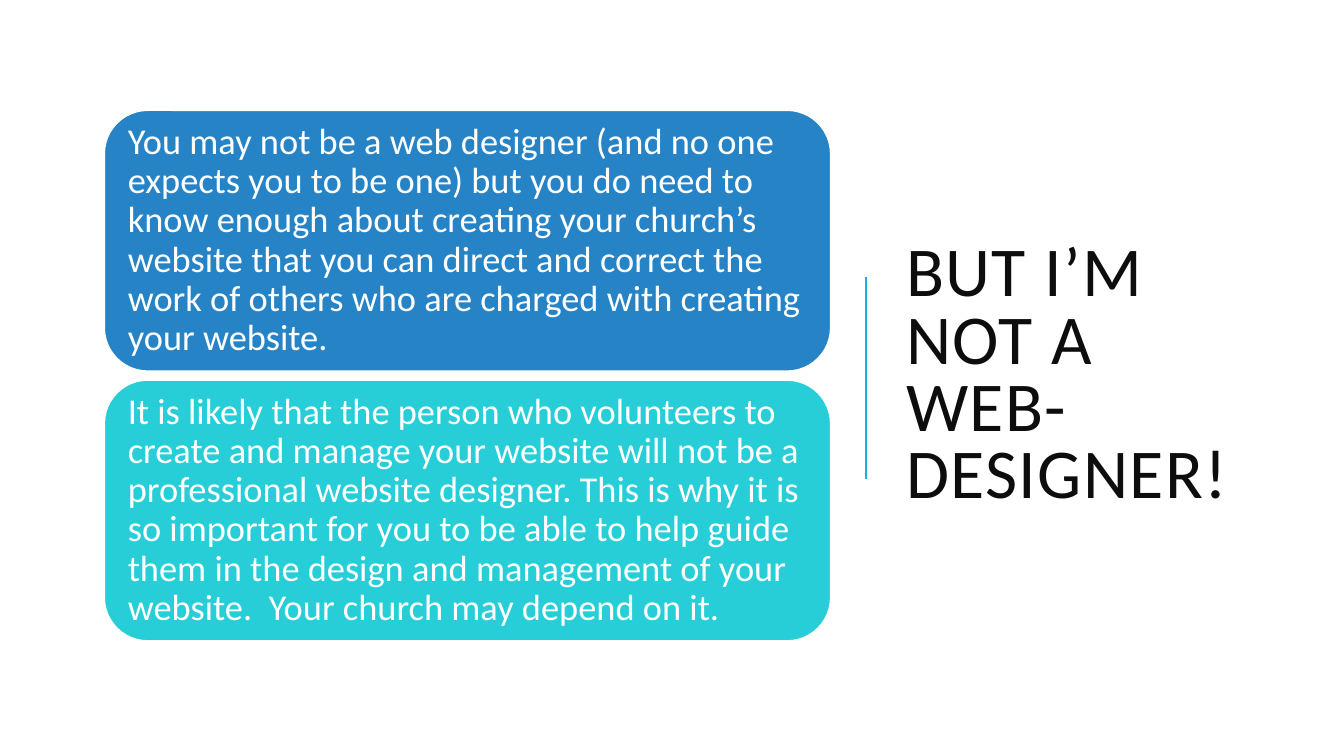
from lxml import etree
from pptx import Presentation
from pptx.dml.color import RGBColor
from pptx.enum import shapes, text
from pptx.oxml import ns
from pptx.util import Pt

COLOURS = {"ink": "0D0D0D", "white": "FFFFFF", "divider": "1CADE4",
           "blue": "2683C6", "turquoise": "27CED7"}
FONT = "Calibri"


def colour(name):
    return RGBColor.from_string(COLOURS[name])


def write(frame, wording, size, ink, line_spacing):
    frame.word_wrap = True
    frame.auto_size = text.MSO_AUTO_SIZE.NONE
    frame.vertical_anchor = text.MSO_ANCHOR.MIDDLE
    paragraph = frame.paragraphs[0]
    paragraph.alignment = text.PP_ALIGN.LEFT
    paragraph.line_spacing = line_spacing
    run = paragraph.add_run()
    run.text = wording
    run.font.name = FONT
    run.font.size = Pt(size)
    run.font.color.rgb = colour(ink)
    return run


deck = Presentation()
deck.slide_width, deck.slide_height = Pt(960), Pt(540)
slide = deck.slides.add_slide(deck.slide_layouts[5])

divider = slide.shapes.add_connector(
    shapes.MSO_CONNECTOR.STRAIGHT, Pt(618.5), Pt(342), Pt(618.5), Pt(198))
divider.line.color.rgb = colour("divider")
divider.line.width = Pt(1.5)
etree.SubElement(divider._element.spPr, ns.qn("a:effectLst"))

title = slide.shapes.title
title.left, title.top, title.width, title.height = Pt(640), Pt(50.4), Pt(273.6), Pt(438.5)
heading = write(title.text_frame, "BUT I’M NOT A WEB-DESIGNER!", 50, "ink", 0.8)
heading._r.get_or_add_rPr().set("spc", "100")

messages = [
    ("blue", "You may not be a web designer (and no one expects you to be one) but you do "
     "need to know enough about creating your church’s website that you can direct and "
     "correct the work of others who are charged with creating your website."),
    ("turquoise", "It is likely that the person who volunteers to create and manage your "
     "website will not be a professional website designer. This is why it is so important "
     "for you to be able to help guide them in the design and management of your website.  "
     "Your church may depend on it."),
]
panel_top, panel_height, panel_gap = 78.7, 186.5, 6.2

for index, (fill, message) in enumerate(messages):
    panel = slide.shapes.add_shape(
        shapes.MSO_SHAPE.ROUNDED_RECTANGLE, Pt(74.4),
        Pt(panel_top + index * (panel_height + panel_gap)), Pt(519), Pt(panel_height))
    panel.shadow.inherit = False
    panel.fill.solid()
    panel.fill.fore_color.rgb = colour(fill)
    panel.line.color.rgb = colour("white")
    panel.line.width = Pt(1.25)
    frame = panel.text_frame
    frame.margin_left = frame.margin_right = frame.margin_top = frame.margin_bottom = Pt(7.8)
    write(frame, message, 26, "white", 0.9)

deck.save("out.pptx")
